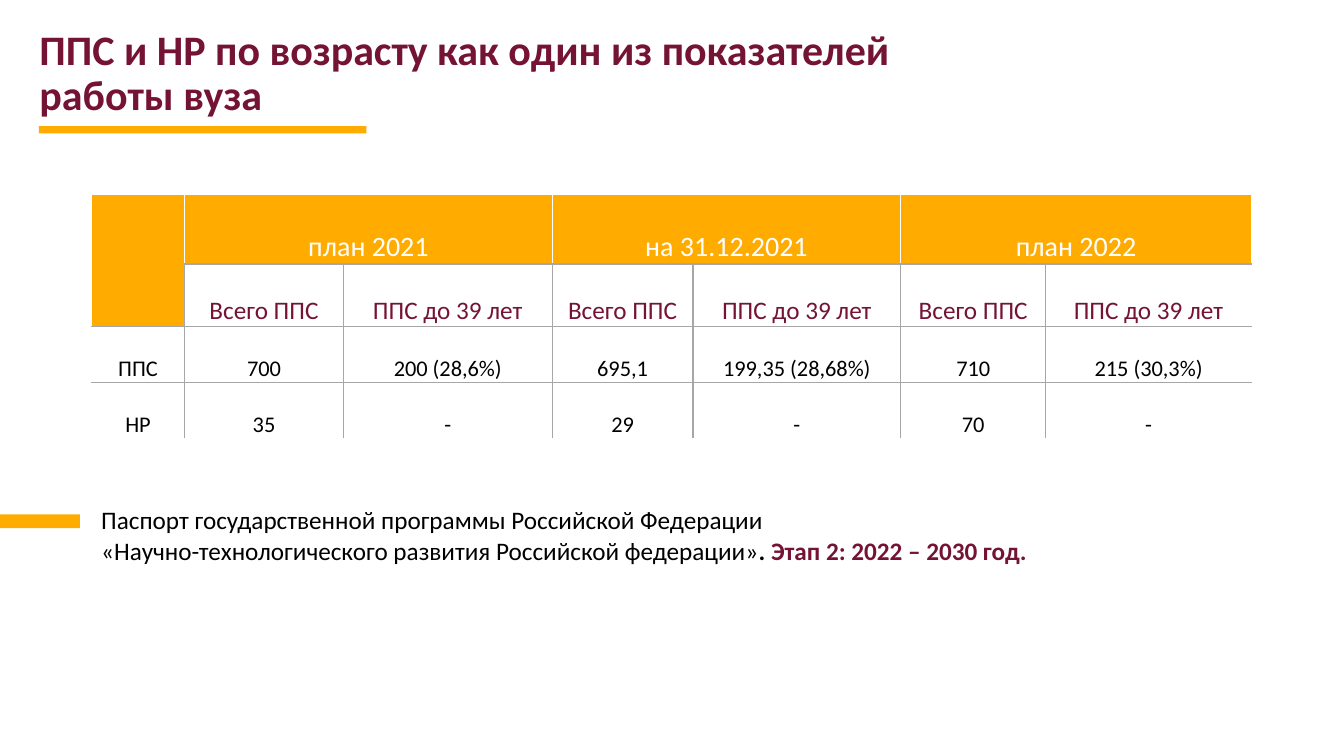
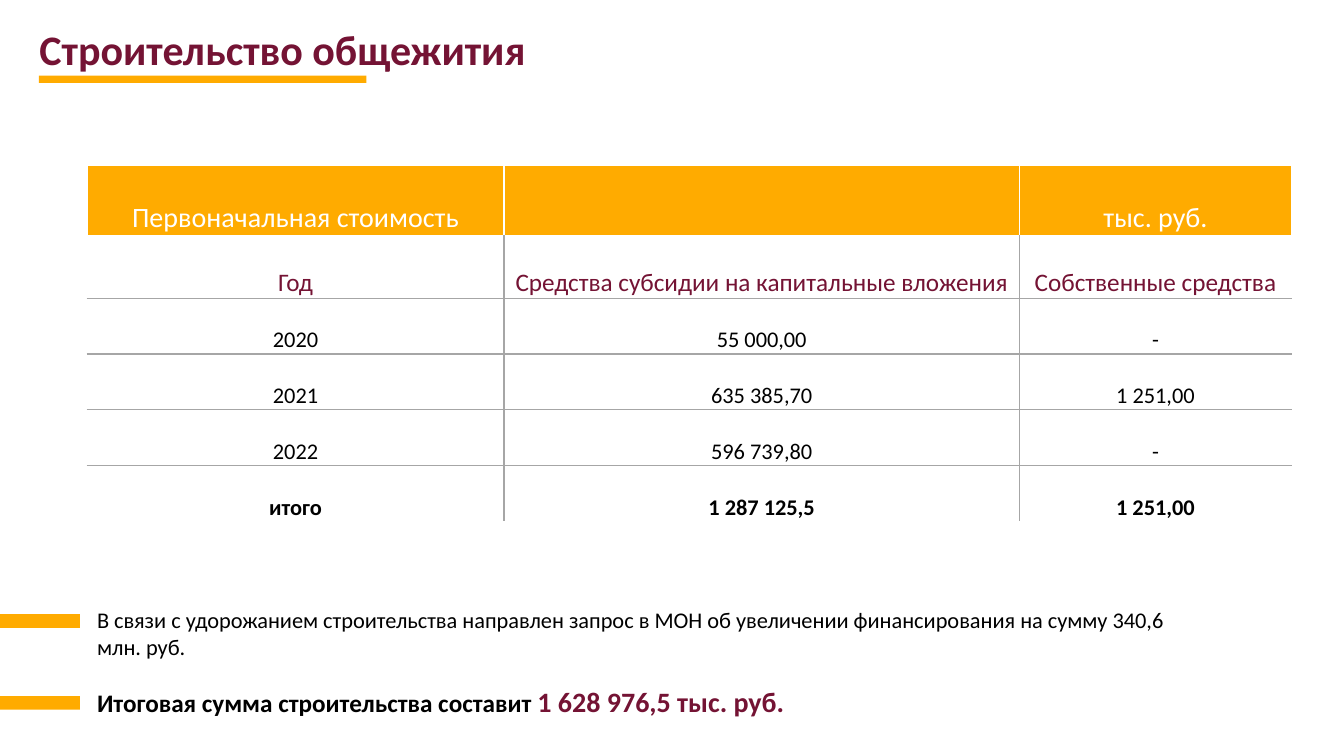
from dataclasses import dataclass

from lxml import etree
from pptx import Presentation
from pptx import util as u
from pptx.dml.color import RGBColor
from pptx.enum import shapes, text
from pptx.oxml import ns

EMU_PER_PX = 9525
TITLE_ONLY_LAYOUT = 5


@dataclass(frozen=True)
class Theme:
    font: str = "Calibri"
    accent: str = "FFAB00"
    burgundy: str = "741334"
    body: str = "000000"
    paper: str = "FFFFFF"
    grid: str = "A6A6A6"
    title_size: int = 30
    header_size: int = 20
    subheader_size: int = 18
    cell_size: int = 16


THEME = Theme()


def px(value):
    return u.Emu(value * EMU_PER_PX)


def place(shape, left, top, width, height):
    shape.left, shape.top = px(left), px(top)
    shape.width, shape.height = px(width), px(height)


def add_run(paragraph, words, size, color, bold=False):
    run = paragraph.add_run()
    run.text = words
    font = run.font
    font.name, font.size, font.bold = THEME.font, u.Pt(size), bold
    font.color.rgb = RGBColor.from_string(color)


def add_bar(slide, left, top, width, height):
    bar = slide.shapes.add_shape(
        shapes.MSO_SHAPE.RECTANGLE, px(left), px(top), px(width), px(height))
    bar.shadow.inherit = False
    bar.fill.solid()
    bar.fill.fore_color.rgb = RGBColor.from_string(THEME.accent)
    bar.line.fill.background()


def add_titled_slide(presentation, words, title_height):
    slide = presentation.slides.add_slide(
        presentation.slide_layouts[TITLE_ONLY_LAYOUT])
    title = slide.shapes.title
    top = 23
    place(title, 28, top, 836, title_height)
    frame = title.text_frame
    frame.word_wrap = True
    frame.auto_size = text.MSO_AUTO_SIZE.NONE
    frame.vertical_anchor = text.MSO_ANCHOR.TOP
    paragraph = frame.paragraphs[0]
    paragraph.alignment = text.PP_ALIGN.LEFT
    paragraph.line_spacing = 0.9
    add_run(paragraph, words, THEME.title_size, THEME.burgundy, bold=True)
    add_bar(slide, 37, top + title_height, 312, 7)
    return slide


def add_note(slide, left, top, width, height, paragraphs):
    """Add text with an edge marker level with its first line.

    Each paragraph is a list of (words, size, color, bold) runs.
    """
    largest = max(run[1] for run in paragraphs[0])
    add_bar(slide, 0, top + int(largest * 0.8), 76, 13)
    box = slide.shapes.add_textbox(px(left), px(top), px(width), px(height))
    frame = box.text_frame
    frame.word_wrap = True
    for index, runs in enumerate(paragraphs):
        paragraph = frame.add_paragraph() if index else frame.paragraphs[0]
        for run in runs:
            add_run(paragraph, *run)


def set_borders(cell, colors):
    """Draw the left, right, top and bottom borders in the given colours."""
    properties = cell._tc.get_or_add_tcPr()
    for index, (side, color) in enumerate(zip("LRTB", colors)):
        line = etree.Element(ns.qn(f"a:ln{side}"), w=str(u.Pt(1)))
        fill = etree.SubElement(line, ns.qn("a:solidFill"))
        etree.SubElement(fill, ns.qn("a:srgbClr"), val=color)
        properties.insert(index, line)


def border_colors(row, column, last_row, last_column, header_edge):
    """White outer edges and header dividers, grey lines between body cells."""
    inner = THEME.grid if row else THEME.paper
    left = inner if column else THEME.paper
    right = inner if column < last_column else THEME.paper
    if row == 0 and column == last_column:
        right = header_edge
    top = (THEME.paper, header_edge)[row] if row < 2 else THEME.grid
    bottom = THEME.grid if row < last_row else THEME.paper
    if row == 0:
        bottom = header_edge
    return left, right, top, bottom


def format_cell(cell, words, size, color, bold, fill):
    cell.fill.solid()
    cell.fill.fore_color.rgb = RGBColor.from_string(fill)
    cell.vertical_anchor = text.MSO_ANCHOR.MIDDLE
    cell.margin_left = cell.margin_right = cell.margin_top = px(1)
    cell.margin_bottom = 0
    if words:
        paragraph = cell.text_frame.paragraphs[0]
        paragraph.alignment = text.PP_ALIGN.CENTER
        paragraph.line_spacing = 2.0
        add_run(paragraph, words, size, color, bold)


def add_table(slide, left, top, widths, rows, header_edge, total=False):
    """Add a table of a header row, a subheader row and body rows."""
    heights = [65, 59] + [53] * (len(rows) - 2)
    table = slide.shapes.add_table(
        len(rows), len(widths), px(left), px(top),
        px(sum(widths)), px(sum(heights))).table
    table.first_row = table.horz_banding = False
    for column, width in zip(table.columns, widths):
        column.width = px(width)
    for row, height in zip(table.rows, heights):
        row.height = px(height)

    styles = [(THEME.header_size, THEME.paper),
              (THEME.subheader_size, THEME.burgundy),
              (THEME.cell_size, THEME.body)]
    last_row, last_column = len(rows) - 1, len(widths) - 1
    for r, row in enumerate(rows):
        size, color = styles[min(r, 2)]
        fill = THEME.paper if r else THEME.accent
        for c, words in enumerate(row):
            cell = table.cell(r, c)
            format_cell(cell, words, size, color, total and r == last_row, fill)
            set_borders(cell, border_colors(
                r, c, last_row, last_column, header_edge))
    return table


def build_staff_slide(presentation):
    slide = add_titled_slide(
        presentation, "ППС и НР по возрасту как один из показателей работы вуза", 97)
    table = add_table(
        slide, 87, 185, [89, 151, 199, 134, 198, 138, 196],
        [["", "план 2021", "", "на 31.12.2021", "", "план 2022", ""],
         [""] + ["Всего ППС", "ППС до 39 лет"] * 3,
         ["ППС", "700", "200 (28,6%)", "695,1", "199,35 (28,68%)",
          "710", "215 (30,3%)"],
         ["НР", "35", "-", "29", "-", "70", "-"]],
        header_edge=THEME.grid)
    table.cell(0, 0).merge(table.cell(1, 0))
    for column in (1, 3, 5):
        table.cell(0, column).merge(table.cell(0, column + 1))
    add_note(slide, 87, 476, 1105, 68, [
        [("Паспорт государственной программы Российской Федерации",
          18, THEME.body, False)],
        [("«Научно-технологического развития Российской федерации»",
          18, THEME.body, False),
         (". ", 18, THEME.body, True),
         ("Этап 2: 2022 – 2030 год.", 18, THEME.burgundy, True)]])


def build_dormitory_slide(presentation):
    slide = add_titled_slide(presentation, "Строительство общежития", 49)
    add_table(
        slide, 83, 158, [397, 491, 259],
        [["Первоначальная стоимость", "", "тыс. руб."],
         ["Год", "Средства субсидии на капитальные вложения",
          "Собственные средства"],
         ["2020", "55 000,00", "-"],
         ["2021", "635 385,70", "1 251,00"],
         ["2022", "596 739,80", "-"],
         ["итого", "1 287 125,5", "1 251,00"]],
        header_edge=THEME.paper, total=True)
    add_note(slide, 83, 573, 1048, 61, [
        [("В связи с удорожанием строительства направлен запрос в МОН "
          "об увеличении финансирования на сумму 340,6 млн. руб.",
          16, THEME.body, False)]])
    add_note(slide, 83, 647, 772, 42, [
        [("Итоговая сумма строительства составит ", 18, THEME.body, True),
         ("1 628 976,5 тыс. руб.", 20, THEME.burgundy, True)]])


def main():
    presentation = Presentation()
    presentation.slide_width, presentation.slide_height = px(1280), px(720)
    build_staff_slide(presentation)
    build_dormitory_slide(presentation)
    presentation.save("out.pptx")


if __name__ == "__main__":
    main()
